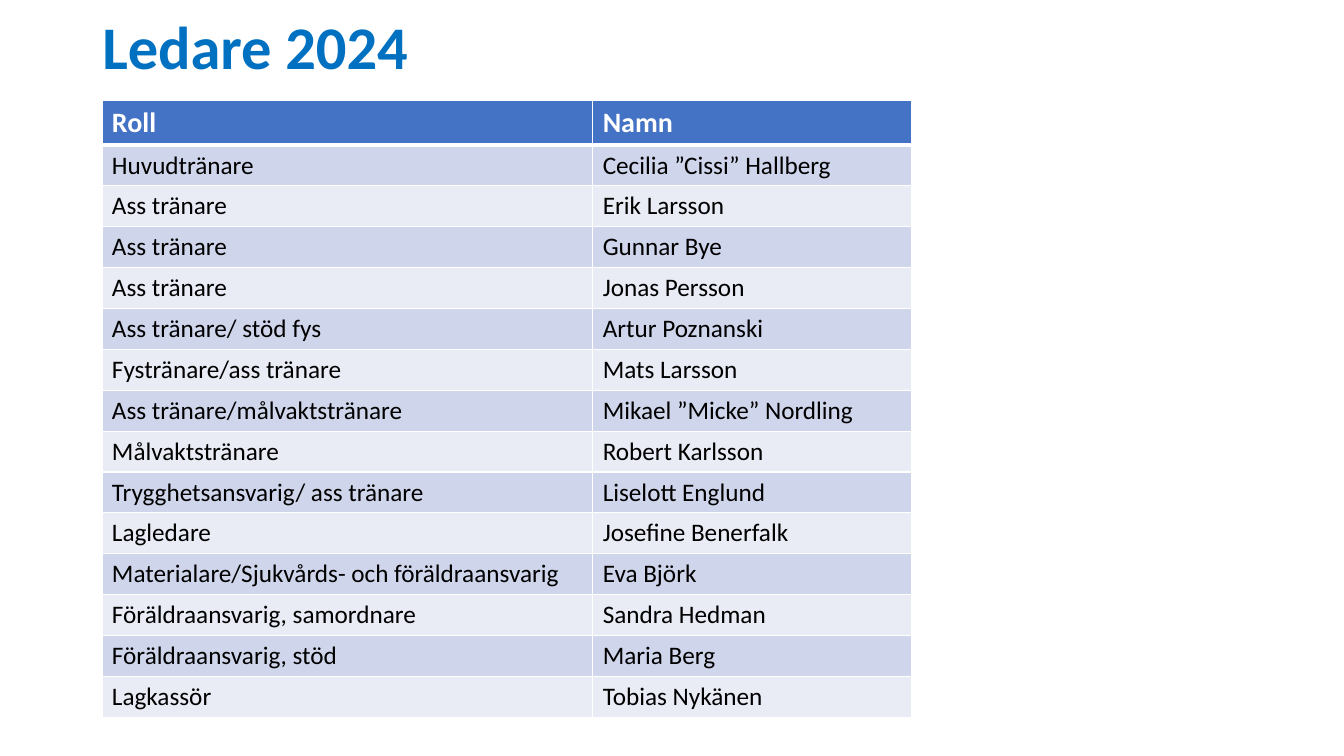
from lxml import etree
from pptx import Presentation
from pptx.dml.color import RGBColor
from pptx.enum.text import MSO_ANCHOR
from pptx.oxml.ns import qn
from pptx.util import Pt

FONT = "Calibri"
COLORS = {
    "title": "0070C0",
    "header": "4472C4",
    "band_dark": "CFD5EA",
    "band_light": "E9EBF5",
    "white": "FFFFFF",
    "black": "000000",
}
HEADINGS = ("Roll", "Namn")
LEADERS = [
    ("Huvudtränare", "Cecilia ”Cissi” Hallberg"),
    ("Ass tränare", "Erik Larsson"),
    ("Ass tränare", "Gunnar Bye"),
    ("Ass tränare", "Jonas Persson"),
    ("Ass tränare/ stöd fys", "Artur Poznanski"),
    ("Fystränare/ass tränare", "Mats Larsson"),
    ("Ass tränare/målvaktstränare", "Mikael ”Micke” Nordling"),
    ("Målvaktstränare", "Robert Karlsson"),
    ("Trygghetsansvarig/ ass tränare", "Liselott Englund"),
    ("Lagledare", "Josefine Benerfalk"),
    ("Materialare/Sjukvårds- och föräldraansvarig", "Eva Björk"),
    ("Föräldraansvarig, samordnare", "Sandra Hedman"),
    ("Föräldraansvarig, stöd", "Maria Berg"),
    ("Lagkassör", "Tobias Nykänen"),
]
COLUMN_WIDTHS = (350.6, 227.5)
HEADER_HEIGHT, ROW_HEIGHT = 31.6, 29.2


def rgb(name):
    return RGBColor.from_string(COLORS[name])


def format_text(tf, size, color, bold):
    for r in tf.paragraphs[0].runs:
        r.font.name = FONT
        r.font.size = Pt(size)
        r.font.bold = bold
        r.font.color.rgb = rgb(color)


def add_title(slide, text):
    sp = slide.shapes.add_textbox(Pt(66), Pt(7.2), Pt(828), Pt(57.6))
    tf = sp.text_frame
    tf.word_wrap = True
    tf.vertical_anchor = MSO_ANCHOR.MIDDLE
    tf.text = text
    tf.paragraphs[0].line_spacing = 0.9
    format_text(tf, 43.2, "title", True)


def set_borders(cell, top=1, bottom=1):
    tc_pr = cell._tc.get_or_add_tcPr()
    for side, width in (("L", 1), ("R", 1), ("T", top), ("B", bottom)):
        line = etree.SubElement(tc_pr, qn(f"a:ln{side}"), w=str(Pt(width)))
        fill = etree.SubElement(line, qn("a:solidFill"))
        etree.SubElement(fill, qn("a:srgbClr"), val=COLORS["white"])


def fill_cell(cell, text, row_index):
    header = row_index == 0
    cell.text = text
    set_borders(cell, top=3 if row_index == 1 else 1, bottom=3 if header else 1)
    band = "band_dark" if row_index % 2 else "band_light"
    cell.fill.solid()
    cell.fill.fore_color.rgb = rgb("header" if header else band)
    if header:
        format_text(cell.text_frame, 20, "white", True)
    else:
        format_text(cell.text_frame, 18, "black", False)


def add_leader_table(slide):
    rows = [HEADINGS, *LEADERS]
    height = HEADER_HEIGHT + len(LEADERS) * ROW_HEIGHT
    table = slide.shapes.add_table(
        len(rows), len(HEADINGS), Pt(72.8), Pt(72), Pt(sum(COLUMN_WIDTHS)), Pt(height)
    ).table
    for column, width in zip(table.columns, COLUMN_WIDTHS):
        column.width = Pt(width)
    for i, texts in enumerate(rows):
        table.rows[i].height = Pt(ROW_HEIGHT if i else HEADER_HEIGHT)
        for j, text in enumerate(texts):
            fill_cell(table.cell(i, j), text, i)


def main():
    prs = Presentation()
    prs.slide_width, prs.slide_height = Pt(960), Pt(540)
    slide = prs.slides.add_slide(prs.slide_layouts[6])
    add_title(slide, "Ledare 2024")
    add_leader_table(slide)
    prs.save("out.pptx")


if __name__ == "__main__":
    main()
